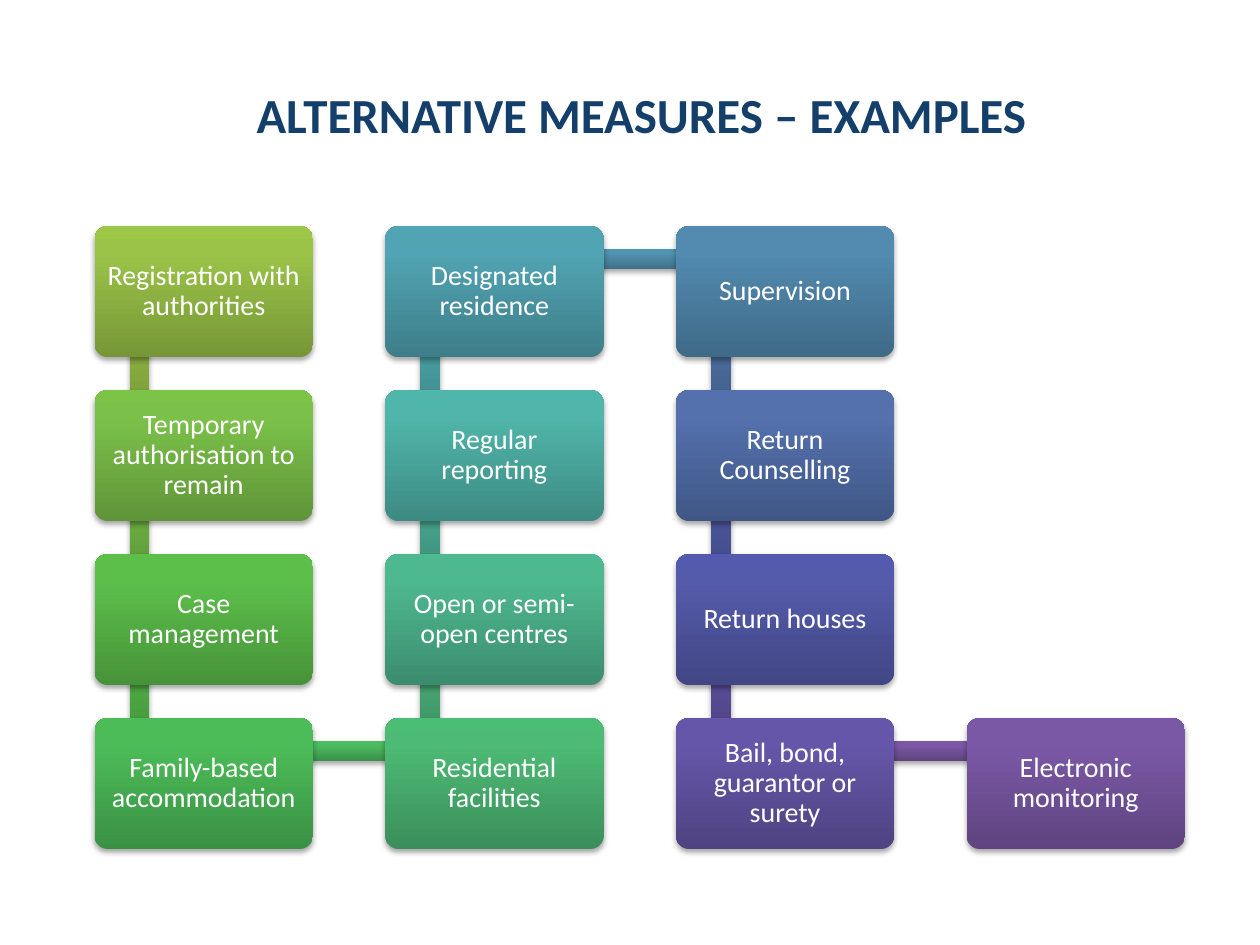
from dataclasses import dataclass
from itertools import zip_longest

from pptx import Presentation
from pptx.dml.color import RGBColor
from pptx.enum.shapes import MSO_SHAPE
from pptx.enum.text import MSO_ANCHOR, PP_ALIGN
from pptx.oxml import parse_xml
from pptx.oxml.ns import nsdecls
from pptx.util import Pt


@dataclass(frozen=True)
class Theme:
    font: str = "Calibri"
    title_size: float = 28
    step_size: float = 16
    title_color: str = "143F6A"
    step_color: str = "FFFFFF"
    shadow_color: str = "000000"


@dataclass(frozen=True)
class Grid:
    """Lengths in points; the anchor is where bars meet inside a box."""
    left: float = 54
    top: float = 129.2
    column_pitch: float = 166.1
    row_pitch: float = 93.7
    width: float = 124.8
    height: float = 74.9
    bar: float = 11.2
    anchor_x: float = 25.7
    anchor_y: float = 18.8

    def corner(self, step):
        return (self.left + step.column * self.column_pitch,
                self.top + step.row * self.row_pitch)


@dataclass(frozen=True)
class Step:
    text: str
    column: int
    row: int
    box_colors: str
    bar_colors: str = ""  # bar leading to the next step


THEME = Theme()
GRID = Grid()
TITLE = "ALTERNATIVE MEASURES – EXAMPLES"

# Steps in order along the winding path; colours run from bottom to top
STEPS = [
    Step("Registration with authorities", 0, 0, "779737 9BC348 9DC746", "779737 9BC348 9DC746"),
    Step("Temporary authorisation to remain", 0, 1, "5F9538 7BC149 7BC447", "5C9538 78C149 78C447"),
    Step("Case management", 0, 2, "479339 5CBF4A 5BC249", "439339 57BE4B 55C149"),
    Step("Family-based accommodation", 0, 3, "3A9144 4CBC58 4ABF57", "3B914A 4CBC60 4ABF5F"),
    Step("Residential facilities", 1, 3, "3B8F5A 4DBA75 4BBD75", "3C8F62 4DB97F 4CBC80"),
    Step("Open or semi-open centres", 1, 2, "3C8D6F 4EB890 4DBA92", "3D8C78 4FB69C 4DB99E"),
    Step("Regular reporting", 1, 1, "3D8B83 50B5AA 4EB8AC", "3E888A 50B1B4 4FB3B6"),
    Step("Designated residence", 1, 0, "3E7E8A 51A4B3 4FA6B5", "3F7188 5293B1 5094B4"),
    Step("Supervision", 2, 0, "3F6A88 528AB0 518BB3", "405C86 5378AE 5278B1"),
    Step("Return Counselling", 2, 1, "405786 5471AE 5271B0", "414984 555FAC 535EAE"),
    Step("Return houses", 2, 2, "414684 555BAB 545AAE", "4D4282 6456A9 6455AB"),
    Step("Bail, bond, guarantor or surety", 2, 3, "4F4382 6656A9 6655AB", "5F4480 7B58A6 7C57A8"),
    Step("Electronic monitoring", 3, 3, "5F4480 7B58A6 7C57A8"),
]


def apply_format(target, values: dict) -> None:
    for name, value in values.items():
        setattr(target, name, value)


def write_text(shape, text: str, size: float, color: str, bold: bool,
               frame_format: dict, para_format: dict) -> None:
    frame = shape.text_frame
    apply_format(frame, {"word_wrap": True, "vertical_anchor": MSO_ANCHOR.MIDDLE, **frame_format})
    para = frame.paragraphs[0]
    apply_format(para, {"alignment": PP_ALIGN.CENTER, **para_format})
    span = para.add_run()
    span.text = text
    apply_format(span.font, {"name": THEME.font, "size": Pt(size), "bold": bold})
    span.font.color.rgb = RGBColor.from_string(color)


def style_surface(shape, colors: str) -> None:
    """Give a shape its upward gradient, no outline and a soft shadow."""
    stops = "".join(f'<a:gs pos="{position}"><a:srgbClr val="{color}"/></a:gs>'
                    for position, color in zip((0, 80000, 100000), colors.split()))
    properties = shape._element.spPr
    properties.append(parse_xml(
        f'<a:gradFill {nsdecls("a")} rotWithShape="0"><a:gsLst>{stops}</a:gsLst>'
        '<a:lin ang="16200000" scaled="0"/></a:gradFill>'))
    shape.line.fill.background()
    properties.append(parse_xml(
        f'<a:effectLst {nsdecls("a")}><a:outerShdw blurRad="{Pt(3.15)}" dist="{Pt(1.8)}" '
        f'dir="5400000" rotWithShape="0"><a:srgbClr val="{THEME.shadow_color}">'
        '<a:alpha val="35000"/></a:srgbClr></a:outerShdw></a:effectLst>'))


def add_bar(page, start: Step, end: Step) -> None:
    vertical = start.column == end.column
    length = GRID.row_pitch if vertical else GRID.column_pitch
    (x1, y1), (x2, y2) = GRID.corner(start), GRID.corner(end)
    center_x = (x1 + x2) / 2 + GRID.anchor_x
    center_y = (y1 + y2) / 2 + GRID.anchor_y
    bar = page.shapes.add_shape(
        MSO_SHAPE.RECTANGLE, Pt(center_x - length / 2), Pt(center_y - GRID.bar / 2),
        Pt(length), Pt(GRID.bar))
    if vertical:
        bar.rotation = 90 if end.row > start.row else 270
    style_surface(bar, start.bar_colors)


def add_box(page, step: Step) -> None:
    left, top = GRID.corner(step)
    box = page.shapes.add_shape(MSO_SHAPE.ROUNDED_RECTANGLE, Pt(left), Pt(top),
                                Pt(GRID.width), Pt(GRID.height))
    box.adjustments[0] = 0.1
    style_surface(box, step.box_colors)
    margins = {f"margin_{side}": Pt(4.8) for side in ("left", "right", "top", "bottom")}
    write_text(box, step.text, THEME.step_size, THEME.step_color, False,
               margins, {"line_spacing": 0.9})


def main() -> None:
    deck = Presentation()
    apply_format(deck, {"slide_width": Pt(720), "slide_height": Pt(540)})
    page = deck.slides.add_slide(deck.slide_layouts[6])

    # Title
    title = page.shapes.add_textbox(Pt(42.5), Pt(43.2), Pt(648), Pt(44))
    write_text(title, TITLE, THEME.title_size, THEME.title_color, True,
               {}, {"space_before": Pt(8), "space_after": Pt(8)})

    # Winding path: each bar lies beneath the boxes it joins
    for step, following in zip_longest(STEPS, STEPS[1:]):
        if following:
            add_bar(page, step, following)
        add_box(page, step)

    deck.save("out.pptx")


if __name__ == "__main__":
    main()
